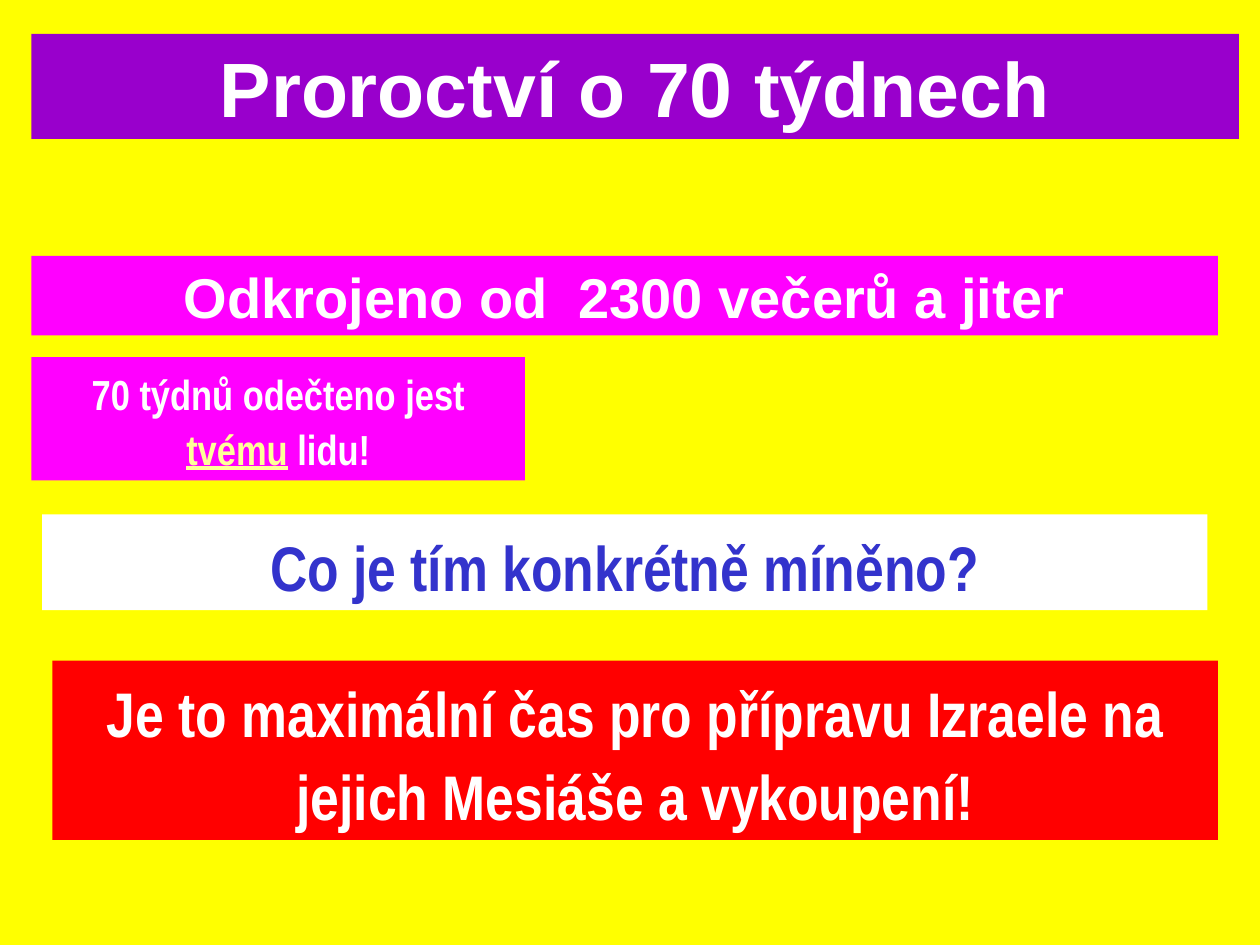
"""Build the slide about the prophecy of the 70 weeks."""
from dataclasses import dataclass

from pptx import Presentation
from pptx.dml.color import RGBColor
from pptx.enum.shapes import MSO_SHAPE
from pptx.enum.text import MSO_ANCHOR, PP_ALIGN
from pptx.slide import Slide
from pptx.util import Pt

YELLOW = RGBColor(0xFF, 0xFF, 0x00)
PURPLE = RGBColor(0x99, 0x00, 0xCC)
MAGENTA = RGBColor(0xFF, 0x00, 0xFF)
RED = RGBColor(0xFF, 0x00, 0x00)
WHITE = RGBColor(0xFF, 0xFF, 0xFF)
BLUE = RGBColor(0x33, 0x33, 0xCC)
PALE_YELLOW = RGBColor(0xFF, 0xFF, 0x99)


@dataclass(frozen=True)
class Span:
    """A stretch of text with its colour and underline."""

    text: str
    color: RGBColor = WHITE
    underline: bool = False


@dataclass(frozen=True)
class Banner:
    """A filled rectangle with one centred paragraph, measured in points."""

    left: float
    top: float
    width: float
    height: float
    fill: RGBColor
    size: float
    spans: tuple[Span, ...]
    font: str = "Arial Narrow"
    line_spacing: float = 1.1


BANNERS = (
    Banner(18, 19.4, 690, 60, PURPLE, 44,
           (Span("Proroctví o 70 týdnech"),), "Arial", 1.0),
    Banner(18, 146.2, 678, 45.5, MAGENTA, 32,
           (Span("Odkrojeno od  2300 večerů a jiter"),), "Arial", 1.0),
    Banner(18, 204, 282, 70.5, MAGENTA, 24,
           (Span("70 týdnů odečteno jest "),
            Span("tvému", PALE_YELLOW, True),
            Span(" lidu!"))),
    Banner(24, 294, 666, 54.7, WHITE, 36,
           (Span("Co je tím konkrétně míněno?", BLUE),)),
    Banner(30, 377.5, 666, 102.5, RED, 36,
           (Span("Je to maximální čas pro přípravu Izraele na "
                 "jejich Mesiáše a vykoupení!"),)),
)


def draw_banner(page: Slide, banner: Banner) -> None:
    """Draw one banner on the page."""
    box = page.shapes.add_shape(
        MSO_SHAPE.RECTANGLE, Pt(banner.left), Pt(banner.top),
        Pt(banner.width), Pt(banner.height))
    box.shadow.inherit = False
    box.fill.solid()
    box.fill.fore_color.rgb = banner.fill
    box.line.fill.background()
    frame = box.text_frame
    frame.word_wrap = True
    frame.vertical_anchor = MSO_ANCHOR.MIDDLE
    para = frame.paragraphs[0]
    para.alignment = PP_ALIGN.CENTER
    para.line_spacing = banner.line_spacing
    for span in banner.spans:
        run = para.add_run()
        run.text = span.text
        run.font.name = banner.font
        run.font.size = Pt(banner.size)
        run.font.bold = True
        run.font.underline = span.underline
        run.font.color.rgb = span.color


def main() -> None:
    """Build the deck and save it."""
    deck = Presentation()
    deck.slide_width, deck.slide_height = Pt(720), Pt(540)
    page = deck.slides.add_slide(deck.slide_layouts[6])
    page.background.fill.solid()
    page.background.fill.fore_color.rgb = YELLOW
    for banner in BANNERS:
        draw_banner(page, banner)
    deck.save("out.pptx")


if __name__ == "__main__":
    main()
